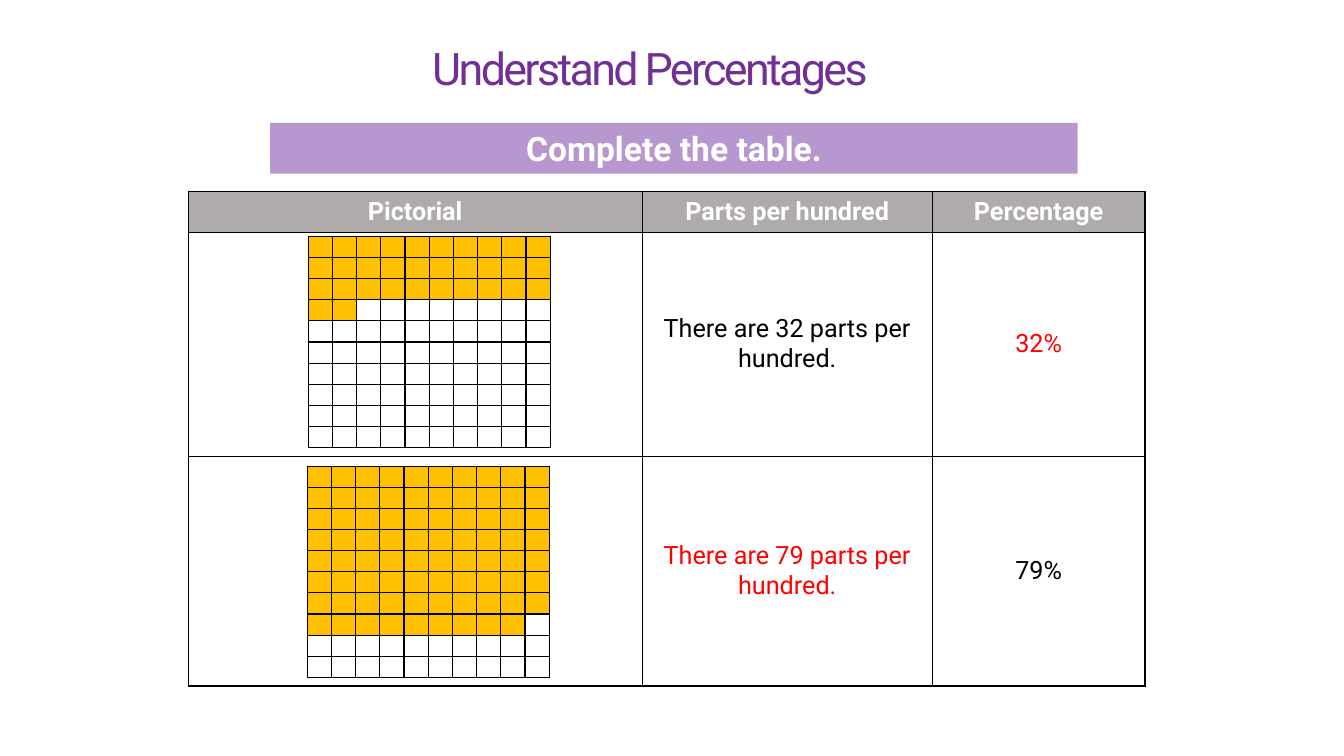
from lxml.etree import SubElement
from pptx import Presentation
from pptx.dml.color import RGBColor
from pptx.enum.shapes import MSO_SHAPE
from pptx.enum.text import MSO_ANCHOR, PP_ALIGN
from pptx.oxml.ns import qn
from pptx.util import Pt

PURPLE = RGBColor(0x70, 0x30, 0x96)
VIOLET = RGBColor(0x70, 0x30, 0xA0)
GREY = RGBColor(0xAF, 0xAB, 0xAB)
AMBER = RGBColor(0xFF, 0xC0, 0x00)
WHITE = RGBColor(0xFF, 0xFF, 0xFF)
BLACK = RGBColor(0, 0, 0)
RED = RGBColor(0xFF, 0, 0)

HEAD = {"size": Pt(32)}
BAR = {"size": Pt(24), "bold": True}
TOP = {"size": Pt(18), "bold": True}
BODY = {"size": Pt(18), "bold": False}
TIGHT = {"margin_left": 0, "margin_right": 0, "margin_top": 0, "margin_bottom": 0}


class Deck:
    """Hold the text style and current slide, and draw each kind of element."""

    def __init__(self, font):
        self.font = font
        self.file = Presentation()
        self.file.slide_width, self.file.slide_height = Pt(960), Pt(540)
        self.slide = self.file.slides.add_slide(self.file.slide_layouts[6])

    def apply(self, item, style):
        for key, value in style.items():
            setattr(item, key, value)

    def label(self, frame, text, style, color, align=PP_ALIGN.CENTER):
        para = frame.paragraphs[0]
        para.alignment = align
        run = para.add_run()
        run.text = text
        self.apply(run.font, {"name": self.font, **style})
        run.font.color.rgb = color
        return para

    def title(self, text, box):
        frame = self.slide.shapes.add_textbox(*map(Pt, box)).text_frame
        frame.word_wrap = False
        para = self.label(frame, text, HEAD, PURPLE, PP_ALIGN.LEFT)
        para.runs[0]._r.get_or_add_rPr().set("spc", "-190")

    def banner(self, text, box):
        bar = self.slide.shapes.add_shape(MSO_SHAPE.RECTANGLE, *map(Pt, box))
        bar.shadow.inherit = False
        bar.line.fill.background()
        bar.fill.solid()
        bar.fill.fore_color.rgb = VIOLET
        tint = bar._element.spPr.find(".//" + qn("a:srgbClr"))
        SubElement(tint, qn("a:alpha"), val="50000")
        para = self.label(bar.text_frame, text, BAR, WHITE)
        para.line_spacing = Pt(28.8)

    def table(self, left, top, cols, rows):
        box = map(Pt, (left, top, sum(cols), sum(rows)))
        table = self.slide.shapes.add_table(len(rows), len(cols), *box).table
        self.apply(table, {"first_row": False, "horz_banding": False})
        for col, width in zip(table.columns, cols):
            col.width = Pt(width)
        for row, height in zip(table.rows, rows):
            row.height = Pt(height)
        return table

    def cell(self, cell, fill=None):
        props = cell._tc.get_or_add_tcPr()
        for side in ("lnL", "lnR", "lnT", "lnB"):
            line = SubElement(props, qn("a:" + side), w=str(Pt(1)))
            paint = SubElement(line, qn("a:solidFill"))
            SubElement(paint, qn("a:srgbClr"), val=str(BLACK))
        cell.vertical_anchor = MSO_ANCHOR.MIDDLE
        if fill is None:
            cell.fill.background()
        else:
            cell.fill.solid()
            cell.fill.fore_color.rgb = fill

    def chart(self, left, top, cols, rows, data):
        table = self.table(left, top, cols, rows)
        for r, row in enumerate(data):
            for c, (text, color) in enumerate(row):
                cell = table.cell(r, c)
                self.cell(cell, GREY if r == 0 else None)
                if text:
                    self.label(cell.text_frame, text, BODY if r else TOP, color)

    def grid(self, left, top, count):
        table = self.table(left, top, [17.3] * 10, [15.1] * 10)
        for i, cell in enumerate(table.iter_cells()):
            self.cell(cell, AMBER if i < count else WHITE)
            self.apply(cell, TIGHT)
            para = cell.text_frame.paragraphs[0]._p
            para.get_or_add_endParaRPr().set("sz", "800")


def main():
    deck = Deck("Roboto")
    deck.title("Understand Percentages", (301.7, 25.2, 329, 46))
    data = [
        [(t, WHITE) for t in ("Pictorial", "Parts per hundred", "Percentage")],
        [("", BLACK), ("There are 32 parts per hundred.", BLACK), ("32%", RED)],
        [("", BLACK), ("There are 79 parts per hundred.", RED), ("79%", BLACK)],
    ]
    deck.chart(134.5, 136.6, (324.2, 207.2, 152), (29.3, 160, 164.2), data)
    deck.banner("Complete the table.", (193, 87.8, 576.8, 36.2))
    deck.grid(219.4, 333, 79)
    deck.grid(220.1, 168.9, 32)
    deck.file.save("out.pptx")


if __name__ == "__main__":
    main()
